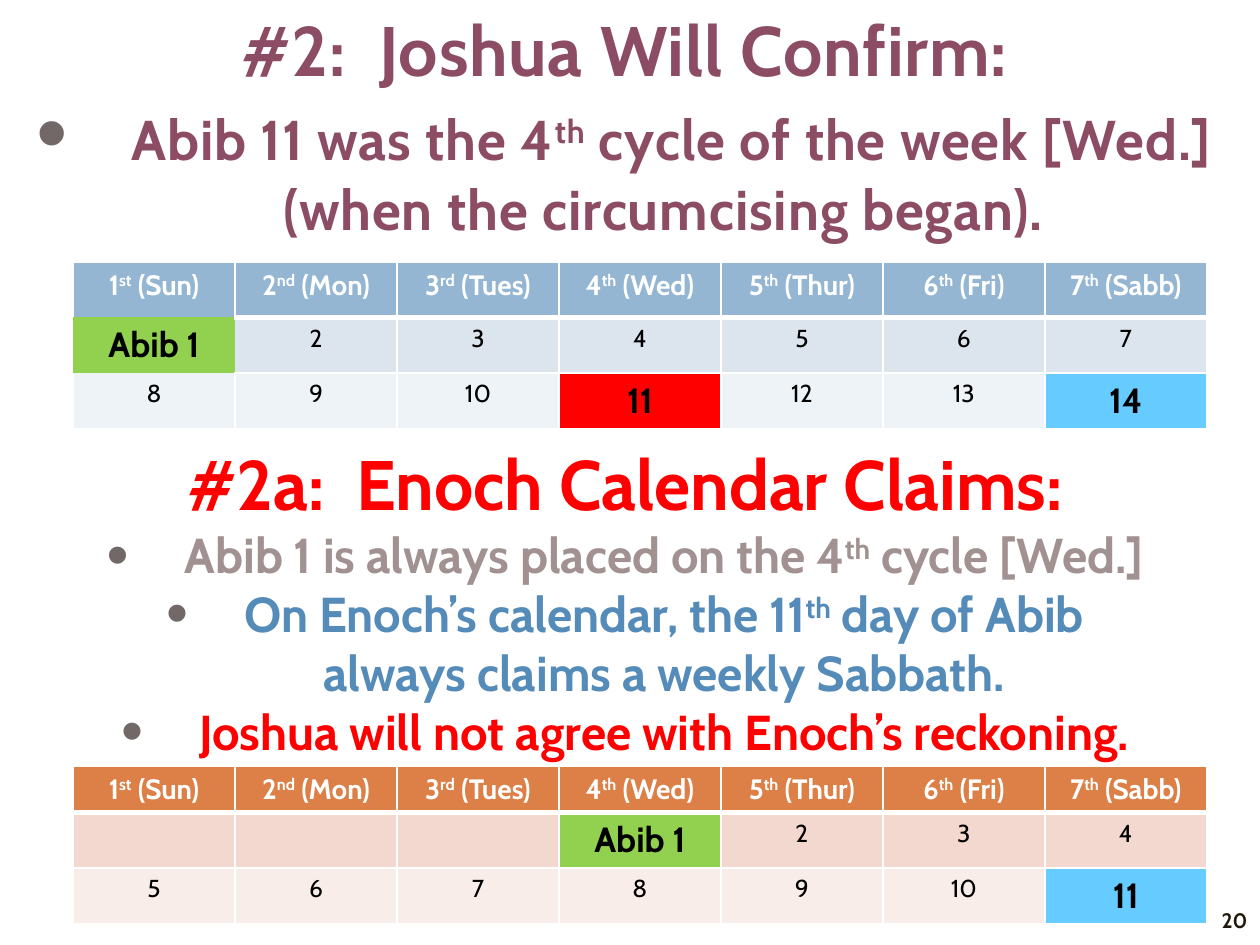
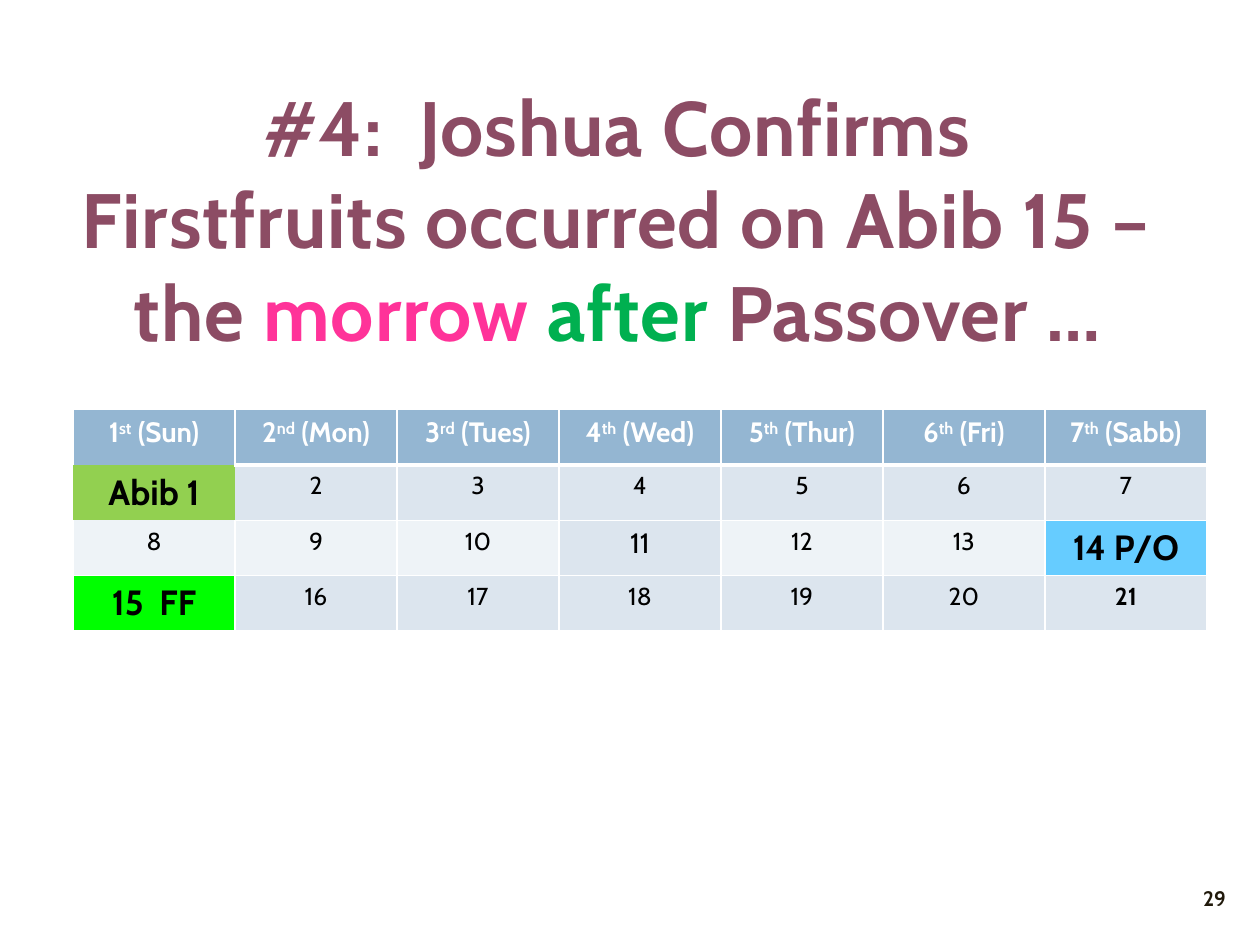
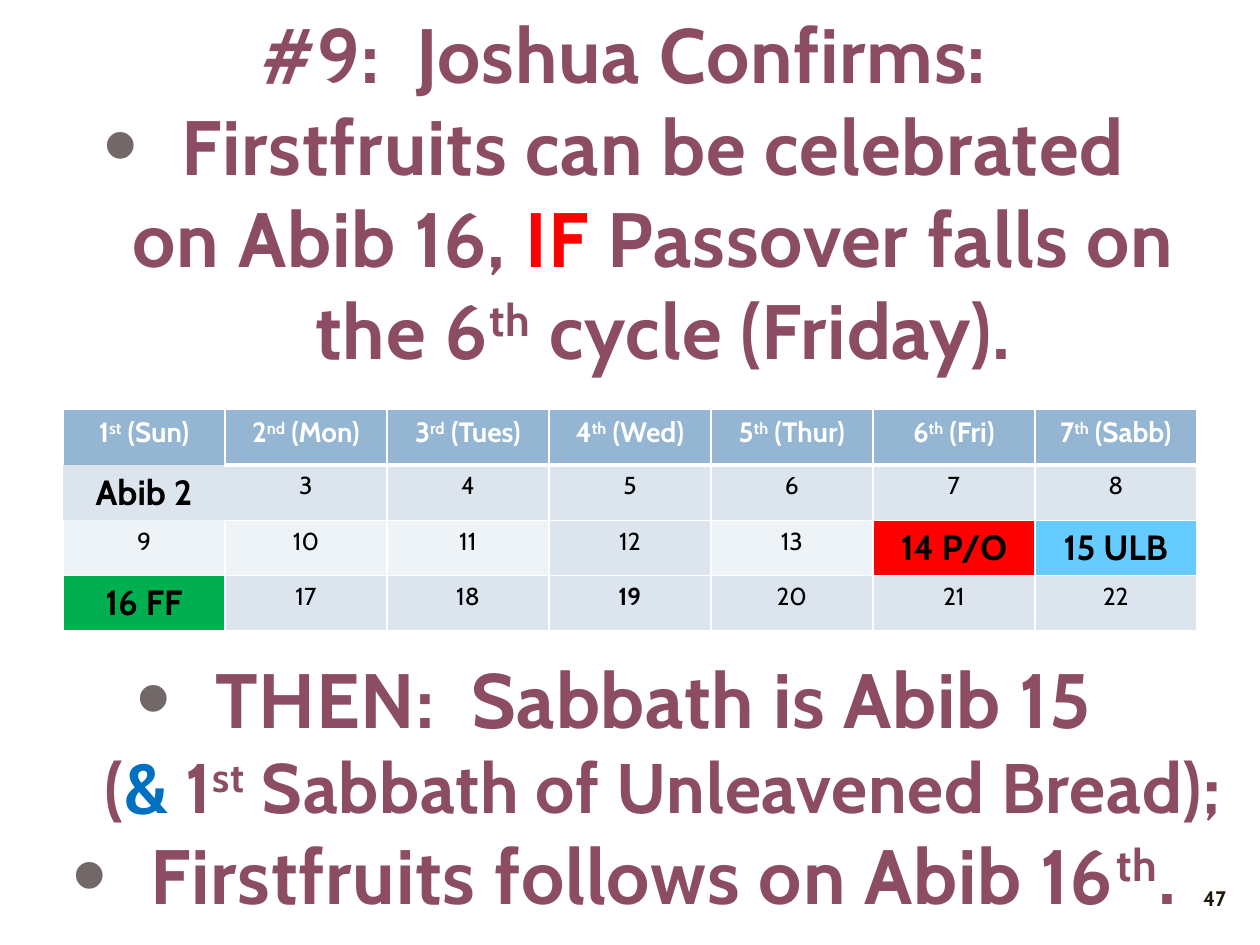
from dataclasses import dataclass

from lxml.etree import SubElement as add_element
from pptx import Presentation
from pptx.dml.color import RGBColor
from pptx.enum.text import MSO_ANCHOR as Anchor, MSO_AUTO_SIZE as AutoSize, PP_ALIGN as Align
from pptx.oxml.ns import qn
from pptx.util import Inches, Pt


@dataclass(frozen=True)
class Theme:
    font: str = "Cabin"
    # Text colours
    plum: str = "8C4C64"
    taupe: str = "A19191"
    steel: str = "558BB8"
    azure: str = "0070C0"
    pink: str = "FF3399"
    black: str = "000000"
    white: str = "FFFFFF"
    page_ink: str = "20190B"
    bullet: str = "726868"
    # Highlights
    red: str = "FF0000"
    green: str = "00B050"
    lime: str = "00FF00"
    leaf: str = "92D050"
    sky: str = "66CCFF"
    # Calendar palettes: header, odd week, even week
    blue_weeks: tuple = ("94B6D2", "DCE5EE", "EEF3F7")
    orange_weeks: tuple = ("DD8047", "F2D8CF", "F9EDE9")
    # Type sizes
    banner: int = 44
    title: int = 40
    lead: int = 32
    item: int = 28
    marked_day: int = 20
    header: int = 16
    day: int = 14
    page_number: int = 12


THEME = Theme()
WEEKDAYS = ["1^st^ (Sun)", "2^nd^ (Mon)", "3^rd^ (Tues)", "4^th^ (Wed)",
            "5^th^ (Thur)", "6^th^ (Fri)", "7^th^ (Sabb)"]
CALENDAR_WIDTH = 9
WEEK_HEIGHT = 0.44
# Edges left open around the first day of a Joshua calendar
OPEN_EDGES = {(0, 0): "B", (1, 0): "LRTB", (1, 1): "L", (2, 0): "T"}


@dataclass(frozen=True)
class Span:
    """Text in one style; ^ encloses a superscript, a newline breaks the line."""
    text: str
    size: int = THEME.banner
    color: str = THEME.plum
    bold: bool = True
    spacing: int = 50


@dataclass(frozen=True)
class Mark:
    """The look of a day that stands out in a calendar."""
    fill: str
    size: int = THEME.marked_day
    bold: bool = True


# ---- Text ----

def write_span(para, span):
    for piece_index, piece in enumerate(span.text.split("^")):
        for line_index, line in enumerate(piece.split("\n")):
            if line_index:
                para.add_line_break()
            if not line:
                continue
            run = para.add_run()
            run.text = line
            run.font.name = THEME.font
            run.font.size = Pt(span.size)
            run.font.bold = span.bold
            run.font.color.rgb = RGBColor.from_string(span.color)
            properties = run.font._element
            properties.set("spc", str(span.spacing))
            if piece_index % 2:
                properties.set("baseline", "30000")


def set_bullet(para, bulleted):
    properties = para._p.get_or_add_pPr()
    indent = Inches(0.62) if bulleted else 0
    properties.set("marL", str(indent))
    properties.set("indent", str(-indent))
    if not bulleted:
        add_element(properties, qn("a:buNone"))
        return
    color = add_element(properties, qn("a:buClr"))
    add_element(color, qn("a:srgbClr"), val=THEME.bullet)
    add_element(properties, qn("a:buSzPct"), val="128000")
    add_element(properties, qn("a:buFont"), typeface="Arial")
    add_element(properties, qn("a:buChar"), char="•")


def write_paragraph(para, spans, bulleted=False, align=Align.CENTER):
    para.alignment = align
    para.space_before = Pt(0)
    set_bullet(para, bulleted)
    for span in spans:
        write_span(para, span)


def place(box, left, top, width, height, anchor=Anchor.TOP):
    box.left, box.top = Inches(left), Inches(top)
    box.width, box.height = Inches(width), Inches(height)
    frame = box.text_frame
    frame.word_wrap = True
    frame.auto_size = AutoSize.NONE
    frame.vertical_anchor = anchor
    return frame


def add_title(page, area, *spans):
    frame = place(page.shapes.title, *area)
    write_paragraph(frame.paragraphs[0], spans)


def add_list(page, index, area, items, heading=None):
    """Fill a body placeholder with bullets, under an optional heading."""
    frame = place(page.placeholders[index], *area)
    rows = [([heading], False)] if heading else []
    rows += [(item, True) for item in items]
    for row_index, (spans, bulleted) in enumerate(rows):
        para = frame.add_paragraph() if row_index else frame.paragraphs[0]
        write_paragraph(para, spans, bulleted)


def add_page_number(page, number, left=7.83, top=6.93):
    box = page.shapes.add_textbox(0, 0, 0, 0)
    frame = place(box, left, top, 2, 0.4, Anchor.MIDDLE)
    span = Span(str(number), THEME.page_number, THEME.page_ink, spacing=0)
    write_paragraph(frame.paragraphs[0], [span], align=Align.RIGHT)


# ---- Calendars ----

def set_borders(cell, bottom_width, open_edges):
    properties = cell._tc.get_or_add_tcPr()
    for edge in "LRTB":
        width = bottom_width if edge == "B" else 1
        line = add_element(properties, qn(f"a:ln{edge}"), w=str(Pt(width)))
        if edge in open_edges:
            add_element(line, qn("a:noFill"))
        else:
            fill = add_element(line, qn("a:solidFill"))
            add_element(fill, qn("a:srgbClr"), val=THEME.white)


def fill_cell(cell, span, color):
    cell.fill.solid()
    cell.fill.fore_color.rgb = RGBColor.from_string(color)
    if span.text:
        write_paragraph(cell.text_frame.paragraphs[0], [span])


def add_calendar(page, left, top, weeks, marks, palette=THEME.blue_weeks,
                 header_height=WEEK_HEIGHT, open_edges=OPEN_EDGES):
    rows = [WEEKDAYS] + weeks
    height = header_height + WEEK_HEIGHT * len(weeks)
    frame = page.shapes.add_table(len(rows), len(WEEKDAYS), Inches(left), Inches(top),
                                  Inches(CALENDAR_WIDTH), Inches(height))
    table = frame.table
    for column in table.columns:
        column.width = Inches(CALENDAR_WIDTH / len(WEEKDAYS))
    for row_index, texts in enumerate(rows):
        is_header = row_index == 0
        table.rows[row_index].height = Inches(header_height if is_header else WEEK_HEIGHT)
        band = palette[0] if is_header else palette[2 - row_index % 2]
        for column_index, text in enumerate(texts):
            cell = table.cell(row_index, column_index)
            edges = open_edges.get((row_index, column_index), "")
            set_borders(cell, 3 if is_header else 1, edges)
            if is_header:
                span = Span(text, THEME.header, THEME.white, spacing=0)
                fill_cell(cell, span, band)
            else:
                mark = marks.get(text, Mark(band, THEME.day, False))
                span = Span(text, mark.size, THEME.black, mark.bold, 0)
                fill_cell(cell, span, mark.fill)


def count_weeks(first, last, first_text, blanks=0):
    """Split a run of days into weeks, after some blank days."""
    days = [""] * blanks + [first_text] + [str(day) for day in range(first + 1, last + 1)]
    return [days[start:start + 7] for start in range(0, len(days), 7)]


# ---- Slides ----

def build_cycle_slide(page):
    left, width = -0.08, 10.08
    add_title(page, (left, 0, width, 0.75), Span("#2:  Joshua Will Confirm:", THEME.title))
    add_list(page, 1, (left, 0.67, width, 1.4), [
        [Span(" ", THEME.title),
         Span("Abib 11 was the 4^th^ cycle of the week [Wed.] "
              "(when the circumcising began).", THEME.lead)],
    ])
    claims = [
        ("Abib 1 is always placed on the 4^th^ cycle [Wed.]", THEME.taupe),
        ("On Enoch’s calendar, the 11^th^ day of Abib\nalways claims a weekly Sabbath.",
         THEME.steel),
        ("Joshua will not agree with Enoch’s reckoning.", THEME.red),
    ]
    add_list(page, 2, (left, 3.45, width, 2.7),
             [[Span(text, THEME.item, color, spacing=0)] for text, color in claims],
             Span("#2a:  Enoch Calendar Claims:", THEME.title, THEME.red, spacing=0))
    add_calendar(page, 0.58, 2.08, count_weeks(1, 14, "Abib 1"),
                 {"Abib 1": Mark(THEME.leaf), "11": Mark(THEME.red), "14": Mark(THEME.sky)})
    add_calendar(page, 0.58, 6.08, count_weeks(1, 11, "Abib 1", blanks=3),
                 {"Abib 1": Mark(THEME.leaf), "11": Mark(THEME.sky)},
                 THEME.orange_weeks, header_height=0.36, open_edges={})
    add_page_number(page, 20, left=8, top=7.1)


def build_firstfruits_slide(page):
    add_title(page, (-0.11, 0.58, 10.17, 2.58),
              Span("#4:  Joshua Confirms \nFirstfruits occurred on Abib 15 – \nthe "),
              Span("morrow ", color=THEME.pink),
              Span("after", color=THEME.green),
              Span(" Passover … "))
    weeks = count_weeks(1, 21, "Abib 1")
    weeks[1][6], weeks[2][0] = "14 P/O", "15  FF"
    odd_week = THEME.blue_weeks[1]
    add_calendar(page, 0.58, 3.25, weeks, {
        "Abib 1": Mark(THEME.leaf),
        "11": Mark(odd_week, THEME.header, False),
        "14 P/O": Mark(THEME.sky),
        "15  FF": Mark(THEME.lime),
        "21": Mark(odd_week, THEME.day),
    })
    add_page_number(page, 29)


def build_friday_slide(page):
    left, width = -0.13, 10.17
    add_title(page, (left, 0, width, 0.8), Span("#9:  Joshua Confirms:"))
    add_list(page, 1, (left, 0.73, width, 2.4), [
        [Span("Firstfruits can be celebrated \non Abib 16, "),
         Span("IF", color=THEME.red),
         Span(" Passover falls on \nthe 6^th^ cycle (Friday).")],
    ])
    add_list(page, 2, (left, 5.12, width, 2.2), [
        [Span("THEN:  Sabbath is Abib 15 \n"),
         Span("(", THEME.title),
         Span("&", THEME.title, THEME.azure),
         Span(" 1^st^ Sabbath of Unleavened Bread);", THEME.title)],
        [Span("Firstfruits follows on Abib 16^th^.")],
    ])
    weeks = count_weeks(2, 22, "Abib 2")
    weeks[1][5:], weeks[2][0] = ["14 P/O", "15 ULB"], "16 FF"
    odd_week = THEME.blue_weeks[1]
    add_calendar(page, 0.5, 3.25, weeks, {
        "Abib 2": Mark(odd_week),
        "12": Mark(odd_week, THEME.day, False),
        "14 P/O": Mark(THEME.red),
        "15 ULB": Mark(THEME.sky),
        "16 FF": Mark(THEME.green),
        "19": Mark(odd_week, THEME.day),
    })
    add_page_number(page, 47)


def main():
    deck = Presentation()
    deck.slide_width, deck.slide_height = Inches(10), Inches(7.5)
    two_lists = deck.slide_layouts.get_by_name("Two Content")
    title_only = deck.slide_layouts.get_by_name("Title Only")
    build_cycle_slide(deck.slides.add_slide(two_lists))
    build_firstfruits_slide(deck.slides.add_slide(title_only))
    build_friday_slide(deck.slides.add_slide(two_lists))
    deck.save("out.pptx")


if __name__ == "__main__":
    main()
